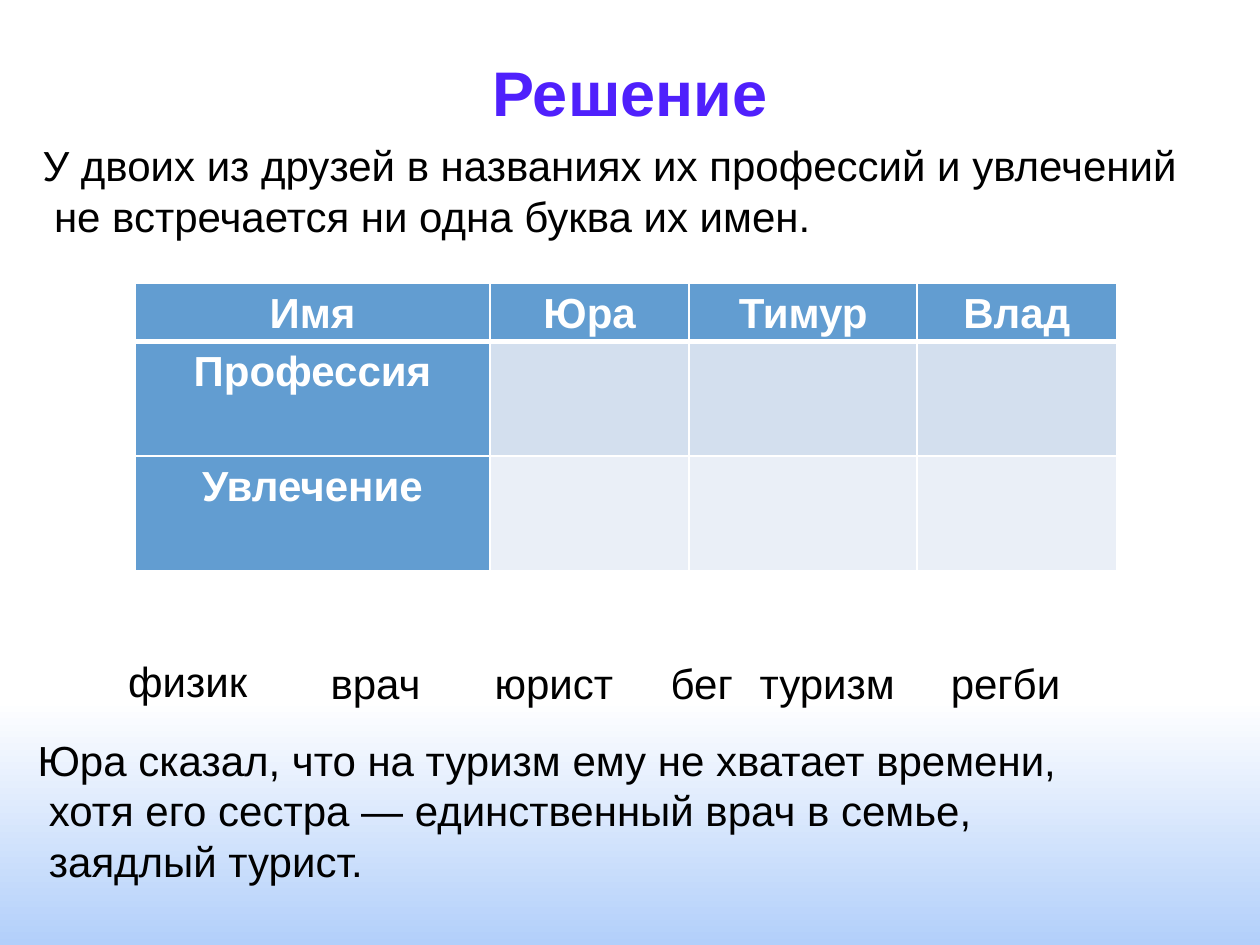
from lxml import etree
from pptx import Presentation
from pptx import util as u
from pptx.dml.color import RGBColor
from pptx.enum import text
from pptx.oxml import ns

BLACK = RGBColor(0, 0, 0)
WHITE = RGBColor(255, 255, 255)
VIOLET = RGBColor(0x4F, 0x20, 0xFC)
BLUE = RGBColor(0x62, 0x9D, 0xD1)
BAND_DARK = RGBColor(0xD3, 0xDF, 0xEE)
BAND_LIGHT = RGBColor(0xEA, 0xEF, 0xF7)
SKY = RGBColor(0xB2, 0xCF, 0xFA)
ALIGN = text.PP_ALIGN


def write(frame, lines, size=24, color=BLACK, bold=False, align=ALIGN.LEFT,
          spacing=None, after=None, hanging=0):
    for index, line in enumerate(lines):
        paragraph = frame.paragraphs[0] if index == 0 else frame.add_paragraph()
        if index and hanging:
            paragraph._p.get_or_add_pPr().set("marL", str(u.Inches(hanging)))
        paragraph.alignment = align
        paragraph.line_spacing = spacing
        paragraph.space_after = after
        run = paragraph.add_run()
        run.text = line
        run.font.name = "Arial"
        run.font.size = u.Pt(size)
        run.font.bold = bold
        run.font.color.rgb = color


class Board:
    def __init__(self, slide):
        self.slide = slide

    def background(self, top, bottom, start):
        fill = self.slide.background.fill
        fill.gradient()
        fill.gradient_angle = 270
        for stop, color, position in zip(fill.gradient_stops, (top, bottom), (start, 1)):
            stop.color.rgb = color
            stop.position = position

    def label(self, lines, left, top, width, height, wrap=False,
              anchor=text.MSO_ANCHOR.TOP, **style):
        box = self.slide.shapes.add_textbox(*map(u.Inches, (left, top, width, height)))
        frame = box.text_frame
        frame.word_wrap = wrap
        frame.vertical_anchor = anchor
        write(frame, lines, **style)

    def border(self, cell, side, width):
        line = etree.SubElement(cell._tc.get_or_add_tcPr(), ns.qn(f"a:ln{side}"),
                                w=str(u.Pt(width)))
        solid = etree.SubElement(line, ns.qn("a:solidFill"))
        etree.SubElement(solid, ns.qn("a:srgbClr"), val=str(WHITE))

    def table(self, rows, left, top, widths, heights, bands):
        grid = self.slide.shapes.add_table(
            len(rows), len(widths), u.Inches(left), u.Inches(top),
            u.Inches(sum(widths)), u.Inches(sum(heights))).table
        for column, width in zip(grid.columns, widths):
            column.width = u.Inches(width)
        for r, (names, height, band) in enumerate(zip(rows, heights, bands)):
            grid.rows[r].height = u.Inches(height)
            for c, name in enumerate(names):
                cell = grid.cell(r, c)
                for side in "LRTB":
                    heavy = (side == "B" and r == 0) or (side == "T" and r == 1)
                    self.border(cell, side, 3 if heavy else 1)
                cell.fill.solid()
                cell.fill.fore_color.rgb = BLUE if c == 0 else band
                if name:
                    cell.margin_left = cell.margin_right = u.Inches(0.07)
                    cell.margin_top = cell.margin_bottom = 0
                    write(cell.text_frame, [name], color=WHITE, bold=True,
                          align=ALIGN.CENTER, spacing=1.15)


def main():
    deck = Presentation()
    deck.slide_width, deck.slide_height = u.Inches(10), u.Inches(7.5)
    board = Board(deck.slides.add_slide(deck.slide_layouts[6]))
    board.background(WHITE, SKY, 0.74)
    board.label(["Решение"], 0.5, 0.3, 9, 0.85, wrap=True,
                anchor=text.MSO_ANCHOR.MIDDLE, size=36, color=VIOLET,
                bold=True, align=ALIGN.CENTER)
    board.table([["Имя", "Юра", "Тимур", "Влад"],
                 ["Профессия", "", "", ""],
                 ["Увлечение", "", "", ""]],
                1.07, 2.25, [2.82, 1.58, 1.81, 1.58], [0.46, 0.91, 0.91],
                [BLUE, BAND_DARK, BAND_LIGHT])
    for answer, left, top, width in [
            ("физик", 0.91, 5.09, 1.16), ("врач", 2.52, 5.11, 0.92),
            ("юрист", 3.82, 5.11, 1.15), ("бег", 5.22, 5.11, 0.7),
            ("туризм", 5.92, 5.11, 1.29), ("регби", 7.44, 5.11, 1.08)]:
        board.label([answer], left, top, width, 0.53, align=ALIGN.CENTER,
                    spacing=1.15, after=u.Pt(10))
    board.label(["Юра сказал, что на туризм ему не хватает времени,",
                 "хотя его сестра — единственный врач в семье,",
                 "заядлый турист."],
                0.2, 5.78, 9.37, 1.31, wrap=True, align=ALIGN.JUSTIFY, hanging=0.09)
    board.label(["У двоих из друзей в названиях их профессий и увлечений",
                 "не встречается ни одна буква их имен."],
                0.24, 1.06, 9.29, 0.91, hanging=0.09)
    deck.save("out.pptx")


if __name__ == "__main__":
    main()
